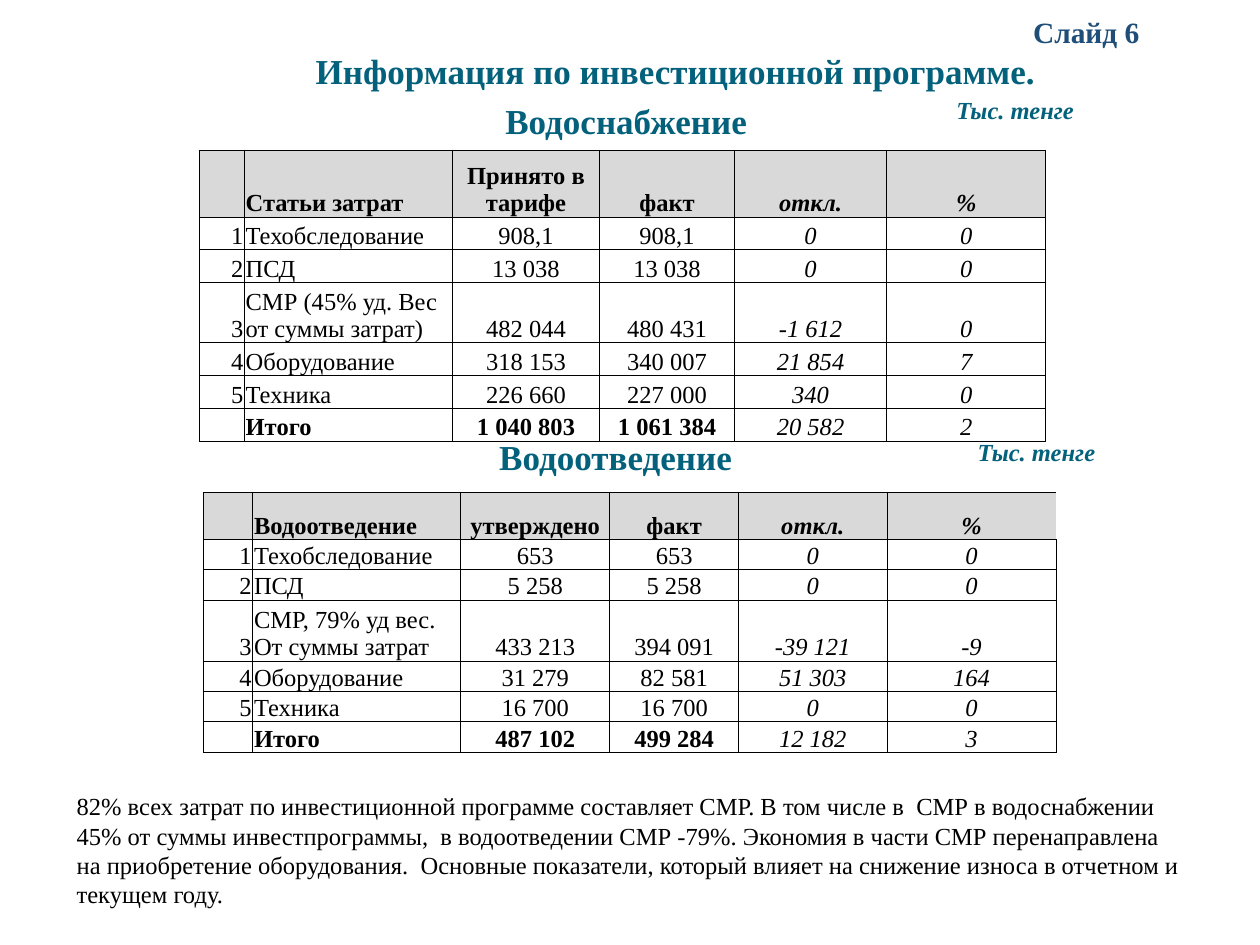
from lxml import etree
from pptx import Presentation
from pptx.dml.color import RGBColor
from pptx.enum.text import MSO_ANCHOR, MSO_AUTO_SIZE, PP_ALIGN
from pptx.oxml.ns import qn
from pptx.util import Pt

LEFT, CENTER, RIGHT, JUSTIFY = PP_ALIGN.LEFT, PP_ALIGN.CENTER, PP_ALIGN.RIGHT, PP_ALIGN.JUSTIFY
TOP, MIDDLE, BOTTOM = MSO_ANCHOR.TOP, MSO_ANCHOR.MIDDLE, MSO_ANCHOR.BOTTOM
NO_AUTOFIT = MSO_AUTO_SIZE.NONE

FONT = "Times New Roman"
TEAL = RGBColor(0x04, 0x61, 0x7B)
NAVY = RGBColor(0x1F, 0x4E, 0x79)
BLACK = RGBColor(0, 0, 0)
HEADER_GREY = RGBColor(0xD9, 0xD9, 0xD9)
BORDER_WIDTH = Pt(0.5)
TABLE_SIZE = 14

TITLE = "Информация по инвестиционной программе."
TITLE_BOX = (111, 25, 550, 34)
UNIT = "Тыс. тенге"

# text, (left, top, width, height), size, colour, italic, alignment, line spacing, side inset
LABELS = [
    (UNIT, (541.5, 37.5, 142, 52.5), 14, TEAL, True, JUSTIFY, 0.9, 5),
    ("Слайд 6", (541.5, 9.4, 158.4, 22.3), 16.8, NAVY, False, CENTER, 0.7, 7.2),
    ("Водоотведение", (82.8, 227.5, 538, 70), 20, TEAL, False, CENTER, 0.9, 5),
    ("Водоснабжение", (82.8, 57.6, 550, 25.2), 20, TEAL, False, CENTER, 0.9, 5),
    (UNIT, (553.7, 242, 142, 34), 14, TEAL, True, JUSTIFY, 0.9, 5),
]

SUMMARY = (
    "82% всех затрат по инвестиционной программе составляет СМР. "
    "В том числе в  СМР в водоснабжении 45% от суммы инвестпрограммы,  "
    "в водоотведении СМР -79%. Экономия в части СМР перенаправлена на "
    "приобретение оборудования.  Основные показатели, который влияет на "
    "снижение износа в отчетном и текущем году."
)
SUMMARY_BOX = (36.7, 448.6, 647.3, 75)

WATER_SUPPLY = {
    "origin": (113.8, 85.7),
    "columns": (25.9, 118.8, 84.2, 77, 87.1, 90.9),
    "heights": {"header": 38.3, "single": 18.7, "double": 34.6},
    "closed_header": True,
    "rows": [
        ("", "Статьи затрат", "Принято в тарифе", "факт", "откл.", "%"),
        ("1", "Техобследование", "908,1", "908,1", "0", "0"),
        ("2", "ПСД", "13 038", "13 038", "0", "0"),
        ("3", "СМР (45% уд. Вес от суммы затрат)", "482 044", "480 431", "-1 612", "0"),
        ("4", "Оборудование", "318 153", "340 007", "21 854", "7"),
        ("5", "Техника", "226 660", "227 000", "340", "0"),
        ("", "Итого", "1 040 803", "1 061 384", "20 582", "2"),
    ],
}
WATER_DISPOSAL = {
    "origin": (116.1, 281.3),
    "columns": (28.4, 118.8, 85.2, 73.6, 84.8, 96.7),
    "heights": {"header": 26.9, "single": 17.4, "double": 34.8},
    "closed_header": False,
    "rows": [
        ("", "Водоотведение", "утверждено", "факт", "откл.", "%"),
        ("1", "Техобследование", "653", "653", "0", "0"),
        ("2", "ПСД", "5 258", "5 258", "0", "0"),
        ("3", "СМР, 79% уд вес. От суммы затрат", "433 213", "394 091", "-39 121", "-9"),
        ("4", "Оборудование", "31 279", "82 581", "51 303", "164"),
        ("5", "Техника", "16 700", "16 700", "0", "0"),
        ("", "Итого", "487 102", "499 284", "12 182", "3"),
    ],
}
COLUMN_ALIGNMENT = (RIGHT, LEFT, CENTER, CENTER, CENTER, CENTER)
WRAPPED_ROW = 3
ITALIC_COLUMNS = (4, 5)
BOLD_TOTAL_COLUMNS = (1, 2, 3)


def write(paragraph, text, size, color, bold=False, italic=False, align=LEFT):
    paragraph.alignment = align
    run = paragraph.add_run()
    run.text = text
    run.font.name = FONT
    run.font.size = Pt(size)
    run.font.color.rgb = color
    run.font.bold = bold
    run.font.italic = italic


def set_frame(frame, anchor, side=7.2, vertical=3.6):
    frame.word_wrap = True
    frame.auto_size = NO_AUTOFIT
    frame.vertical_anchor = anchor
    frame.margin_left = frame.margin_right = Pt(side)
    frame.margin_top = frame.margin_bottom = Pt(vertical)


def add_title(slide):
    title = slide.shapes.title
    title.left, title.top, title.width, title.height = map(Pt, TITLE_BOX)
    set_frame(title.text_frame, MIDDLE, 5, 2.5)
    paragraph = title.text_frame.paragraphs[0]
    paragraph.line_spacing = 0.9
    write(paragraph, TITLE, 20, TEAL, bold=True, align=CENTER)


def add_label(slide, text, box, size, color, italic, align, spacing, side):
    frame = slide.shapes.add_textbox(*map(Pt, box)).text_frame
    set_frame(frame, MIDDLE, side, side / 2)
    paragraph = frame.paragraphs[0]
    paragraph.line_spacing = spacing
    write(paragraph, text, size, color, True, italic, align)


def set_borders(cell, open_right):
    properties = cell._tc.get_or_add_tcPr()
    for side in ("L", "R", "T", "B"):
        line = etree.SubElement(properties, qn(f"a:ln{side}"), w=str(BORDER_WIDTH))
        if side == "R" and open_right:
            etree.SubElement(line, qn("a:noFill"))
        else:
            fill = etree.SubElement(line, qn("a:solidFill"))
            etree.SubElement(fill, qn("a:srgbClr"), val=str(BLACK))


def add_cost_table(slide, data):
    rows, columns, heights = data["rows"], data["columns"], data["heights"]
    total = len(rows) - 1
    row_heights = [heights["single"]] * len(rows)
    row_heights[0] = heights["header"]
    row_heights[WRAPPED_ROW] = heights["double"]
    box = (*data["origin"], sum(columns), sum(row_heights))
    table = slide.shapes.add_table(len(rows), len(columns), *map(Pt, box)).table
    table.first_row = table.horz_banding = False
    for column, width in zip(table.columns, columns):
        column.width = Pt(width)
    for row, height in zip(table.rows, row_heights):
        row.height = Pt(height)

    for r, values in enumerate(rows):
        for c, value in enumerate(values):
            cell = table.cell(r, c)
            cell.vertical_anchor = BOTTOM
            cell.margin_left = cell.margin_right = cell.margin_top = Pt(0.7)
            cell.margin_bottom = 0
            last_header = r == 0 and c == len(columns) - 1
            set_borders(cell, last_header and not data["closed_header"])
            if r == 0:
                cell.fill.solid()
                cell.fill.fore_color.rgb = HEADER_GREY
            else:
                cell.fill.background()
            paragraph = cell.text_frame.paragraphs[0]
            if value:
                bold = r == 0 or (r == total and c in BOLD_TOTAL_COLUMNS)
                write(paragraph, value, TABLE_SIZE, BLACK, bold,
                      c in ITALIC_COLUMNS, COLUMN_ALIGNMENT[c])
            else:
                etree.SubElement(paragraph._p, qn("a:endParaRPr"), sz=str(TABLE_SIZE * 100))


def main():
    deck = Presentation()
    deck.slide_width, deck.slide_height = Pt(720), Pt(540)
    slide = deck.slides.add_slide(deck.slide_layouts[5])
    add_title(slide)
    for label in LABELS:
        add_label(slide, *label)
    summary = slide.shapes.add_textbox(*map(Pt, SUMMARY_BOX)).text_frame
    set_frame(summary, TOP)
    write(summary.paragraphs[0], SUMMARY, 14, BLACK)
    for data in (WATER_SUPPLY, WATER_DISPOSAL):
        add_cost_table(slide, data)
    deck.save("out.pptx")


if __name__ == "__main__":
    main()
